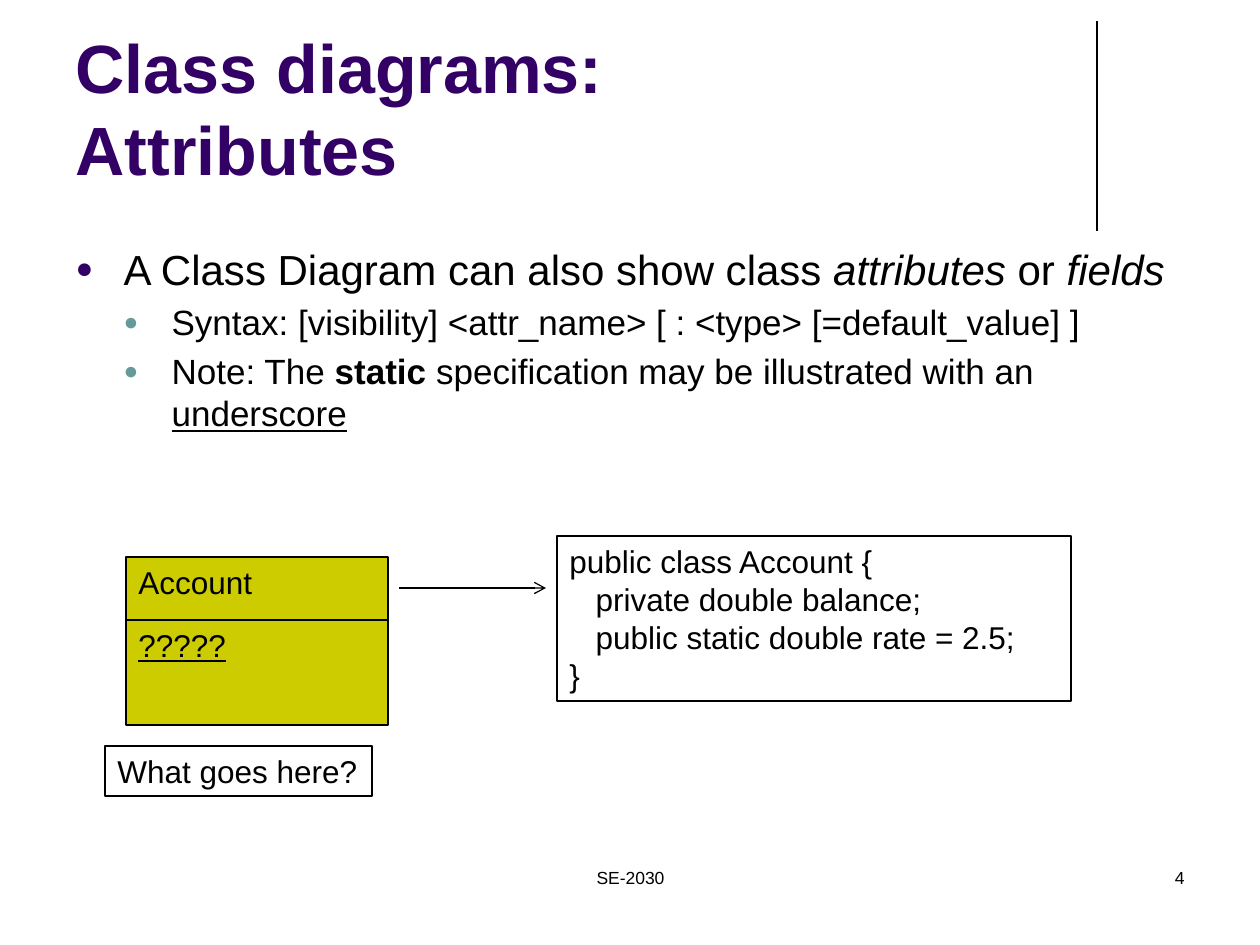
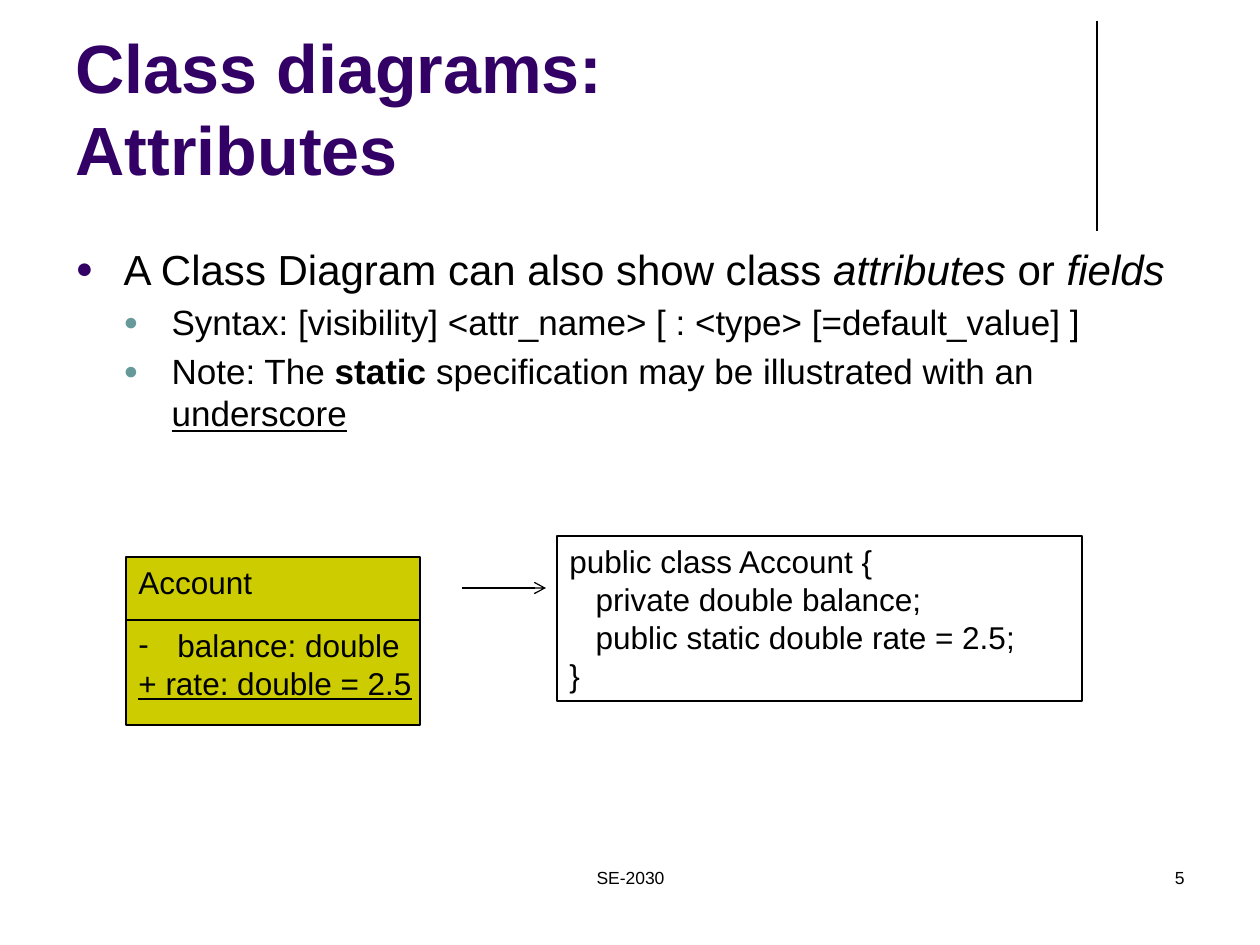
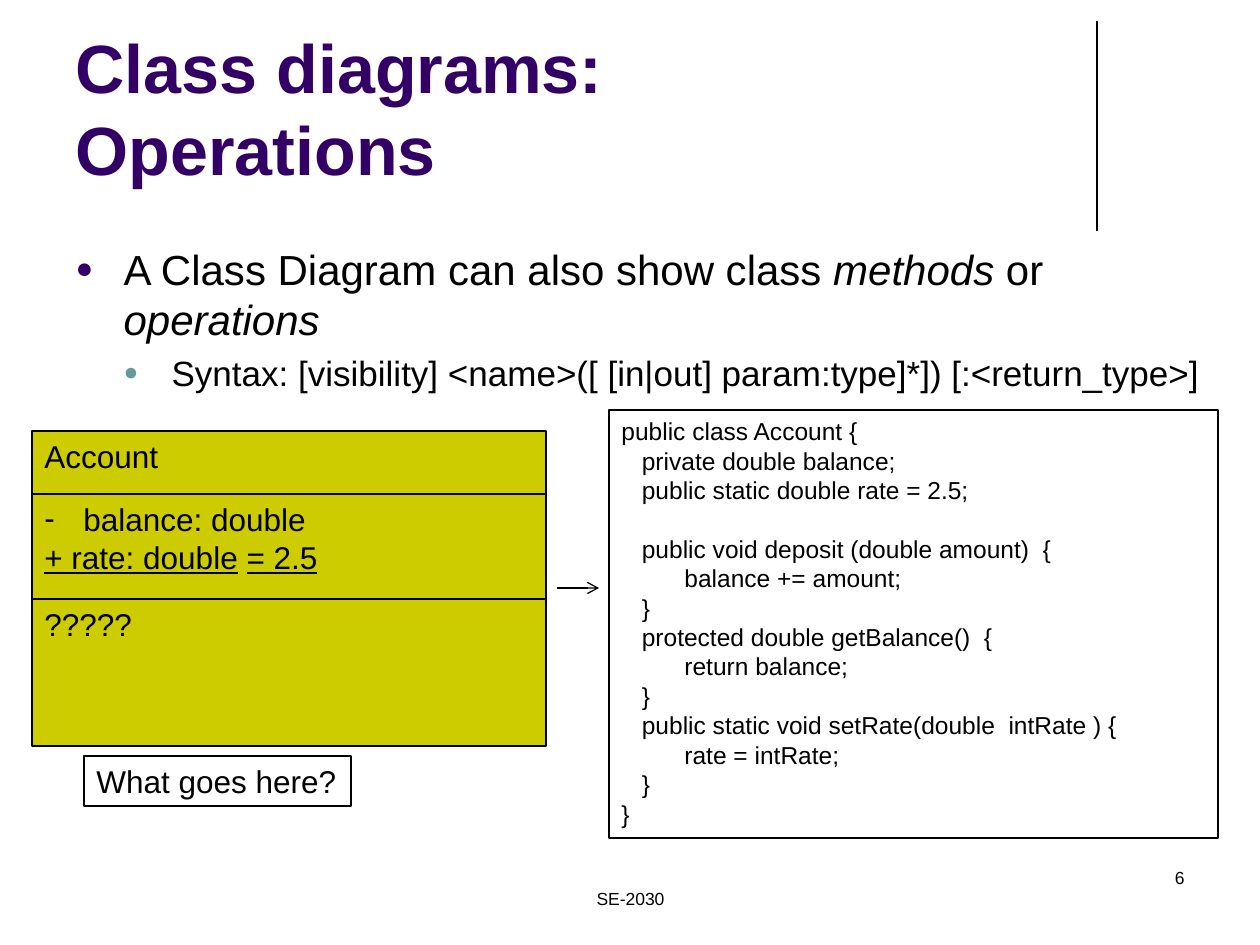
from copy import deepcopy

from lxml import etree
from pptx import Presentation
from pptx import util as u
from pptx.dml.color import RGBColor
from pptx.enum import shapes, text
from pptx.oxml.ns import qn

FONT = "Arial"
BLACK, PURPLE, TEAL, OLIVE = "000000", "330066", "669999", "CCCC00"
PX = 914400 / 126

TITLE_BOX = (63, 16, 1040, 179)
NUMBER_BOX = (903, 861, 294, 63)
RULE = (1097, 21, 1097, 231)
ARROW_Y = 588
FOOTER = "SE-2030"
QUESTION = "What goes here?"

# A line is a string or a list of parts; a part is a string or (string, style letter).
# A body line carries its level, a box line may start with a "-" bullet.
ATTRIBUTE_POINTS = [
    (0, ["A Class Diagram can also show class ", ("attributes ", "i"), "or ", ("fields", "i")]),
    (1, "Syntax: [visibility] <attr_name> [ : <type> [=default_value] ]"),
    (1, ["Note: The ", ("static", "b"), " specification may be illustrated with an ",
         ("underscore", "u")]),
]
OPERATION_POINTS = [
    (0, ["A Class Diagram can also show class ", ("methods", "i"), " or ", ("operations", "i")]),
    (1, "Syntax: [visibility] <name>([ [in|out] param:type]*]) [:<return_type>]"),
]
FIELD_CODE = [
    "public class Account {\v   private double balance;",
    "   public static double rate = 2.5;",
]
METHOD_CODE = [
    "",
    "   public void deposit (double amount)  {",
    "\tbalance += amount;",
    "   }",
    "   protected double getBalance()  {",
    "\treturn balance;",
    "   }",
    "   public static void setRate(double  intRate ) {",
    "\trate = intRate;",
    "   }",
]
BALANCE = "balance: double"
NAME_ROW = (63, ["Account"], False)

# Each class row is (height, lines, whether its first line has a dash bullet).
SLIDES = [
    dict(number=4, title="Class diagrams:\vAttributes", points=ATTRIBUTE_POINTS,
         body_width=1134, footer_top=861,
         class_at=(126, 557, 262),
         rows=[NAME_ROW, (105, [[("?????", "u")]], False)],
         code=FIELD_CODE + ["}"], code_box=(557, 536, 514, 165), code_size=18,
         arrow=(399, 546), question_at=(105, 746)),
    dict(number=5, title="Class diagrams:\vAttributes", points=ATTRIBUTE_POINTS,
         body_width=1134, footer_top=861,
         class_at=(126, 557, 294),
         rows=[NAME_ROW, (105, [BALANCE, [("+ rate: double = 2.5", "u")]], True)],
         code=FIELD_CODE + ["}"], code_box=(557, 536, 525, 165), code_size=18,
         arrow=(462, 546), question_at=None),
    dict(number=6, title="Class diagrams:\vOperations", points=OPERATION_POINTS,
         body_width=1155, footer_top=882,
         class_at=(32, 431, 514),
         rows=[NAME_ROW,
               (105, [BALANCE, [("+ rate: double", "u"), " ", ("= 2.5", "u")]], True),
               (147, ["?????"], False)],
         code=FIELD_CODE + METHOD_CODE + ["}"], code_box=(609, 410, 609, 428), code_size=14,
         arrow=(557, 599), question_at=(84, 756)),
]


def px(*lengths):
    return [u.Emu(round(length * PX)) for length in lengths]


def rgb(value):
    return RGBColor.from_string(value)


def add_xml(parent, tag, **attributes):
    return etree.SubElement(parent, qn(tag), attributes)


def write(paragraph, line, size=18, color=BLACK, bold=False, align=text.PP_ALIGN.LEFT):
    """Fill one paragraph with styled runs; a vertical tab is a line break."""
    paragraph.alignment = align
    for part in [line] if isinstance(line, str) else line:
        words, style = (part, "") if isinstance(part, str) else part
        for index, piece in enumerate(words.split("\v")):
            if index:
                paragraph.add_line_break()
                paragraph._p[-1].append(deepcopy(run.font._element))
            run = paragraph.add_run()
            run.text = piece
            font = run.font
            font.name, font.size, font.color.rgb = FONT, u.Pt(size), rgb(color)
            font.bold = bold or style == "b"
            font.italic, font.underline = style == "i", style == "u"
    if not line:
        paragraph._p.remove(run._r)
        add_xml(paragraph._p, "a:endParaRPr", sz=str(size * 100))


def add_bullet(paragraph, char, indent, hanging, color=BLACK, percent=100):
    properties = paragraph._p.get_or_add_pPr()
    properties.set("marL", str(px(indent)[0]))
    properties.set("indent", str(-px(hanging)[0]))
    add_xml(add_xml(properties, "a:buClr"), "a:srgbClr", val=color)
    add_xml(properties, "a:buSzPct", val=str(percent * 1000))
    add_xml(properties, "a:buFont", typeface=FONT)
    add_xml(properties, "a:buChar", char=char)


def paragraphs(frame, lines):
    """Pair each line with its own paragraph of the frame."""
    for index, line in enumerate(lines):
        yield (frame.add_paragraph() if index else frame.paragraphs[0]), line


def place(shape, left, top, width, height):
    shape.left, shape.top, shape.width, shape.height = px(left, top, width, height)


def add_label(slide, box, words, align):
    frame = slide.shapes.add_textbox(*px(*box)).text_frame
    frame.word_wrap = True
    write(frame.paragraphs[0], words, size=10, align=align)


def add_box(slide, box, lines, fill=None, size=18, wrap=False, dash=False):
    shape = slide.shapes.add_shape(shapes.MSO_SHAPE.RECTANGLE, *px(*box))
    shape.shadow.inherit = False
    if fill:
        shape.fill.solid()
        shape.fill.fore_color.rgb = rgb(fill)
    else:
        shape.fill.background()
    shape.line.color.rgb, shape.line.width = rgb(BLACK), u.Pt(0.75)
    frame = shape.text_frame
    frame.word_wrap, frame.vertical_anchor = wrap, text.MSO_ANCHOR.TOP
    for index, (paragraph, line) in enumerate(paragraphs(frame, lines)):
        if dash and index == 0:
            add_bullet(paragraph, "-", 39, 39)
        write(paragraph, line, size=size)


def add_line(slide, ends, arrow=False):
    line = slide.shapes.add_connector(shapes.MSO_CONNECTOR.STRAIGHT, *px(*ends))
    line.line.color.rgb, line.line.width = rgb(BLACK), u.Pt(0.75)
    properties = line._element.spPr
    if arrow:
        add_xml(properties.find(qn("a:ln")), "a:tailEnd", type="arrow")
    add_xml(properties, "a:effectLst")


def add_heading(slide, title):
    heading = slide.shapes.title
    place(heading, *TITLE_BOX)
    frame = heading.text_frame
    frame.auto_size, frame.vertical_anchor = text.MSO_AUTO_SIZE.NONE, text.MSO_ANCHOR.BOTTOM
    write(frame.paragraphs[0], title, size=39, color=PURPLE, bold=True)


def add_points(slide, points, width):
    body = slide.placeholders[1]
    place(body, 63, 237, width, 572)
    frame = body.text_frame
    frame.auto_size = text.MSO_AUTO_SIZE.NONE
    for index, (paragraph, (level, line)) in enumerate(paragraphs(frame, points)):
        size, color = [(24, PURPLE), (20, TEAL)][level]
        paragraph.level = level
        add_bullet(paragraph, "●", 48 * (level + 1), 48, color, percent=70)
        paragraph.space_before = u.Pt(size * 0.2 if index else 0)
        write(paragraph, line, size=size)


def add_class(slide, left, top, width, rows):
    for height, lines, dash in rows:
        add_box(slide, (left, top, width, height), lines, fill=OLIVE, dash=dash)
        top += height


def build_slide(deck, content):
    slide = deck.slides.add_slide(deck.slide_layouts[1])
    add_line(slide, RULE)
    add_heading(slide, content["title"])
    add_points(slide, content["points"], content["body_width"])
    add_label(slide, (431, content["footer_top"], 399, 63), FOOTER, text.PP_ALIGN.CENTER)
    add_label(slide, NUMBER_BOX, str(content["number"]), text.PP_ALIGN.RIGHT)
    add_class(slide, *content["class_at"], content["rows"])
    add_box(slide, content["code_box"], content["code"], size=content["code_size"], wrap=True)
    start, end = content["arrow"]
    add_line(slide, (start, ARROW_Y, end, ARROW_Y), arrow=True)
    if content["question_at"]:
        add_box(slide, (*content["question_at"], 267, 50), [QUESTION])


def main():
    deck = Presentation()
    deck.slide_width, deck.slide_height = px(1260, 945)
    for content in SLIDES:
        build_slide(deck, content)
    deck.save("out.pptx")


if __name__ == "__main__":
    main()
